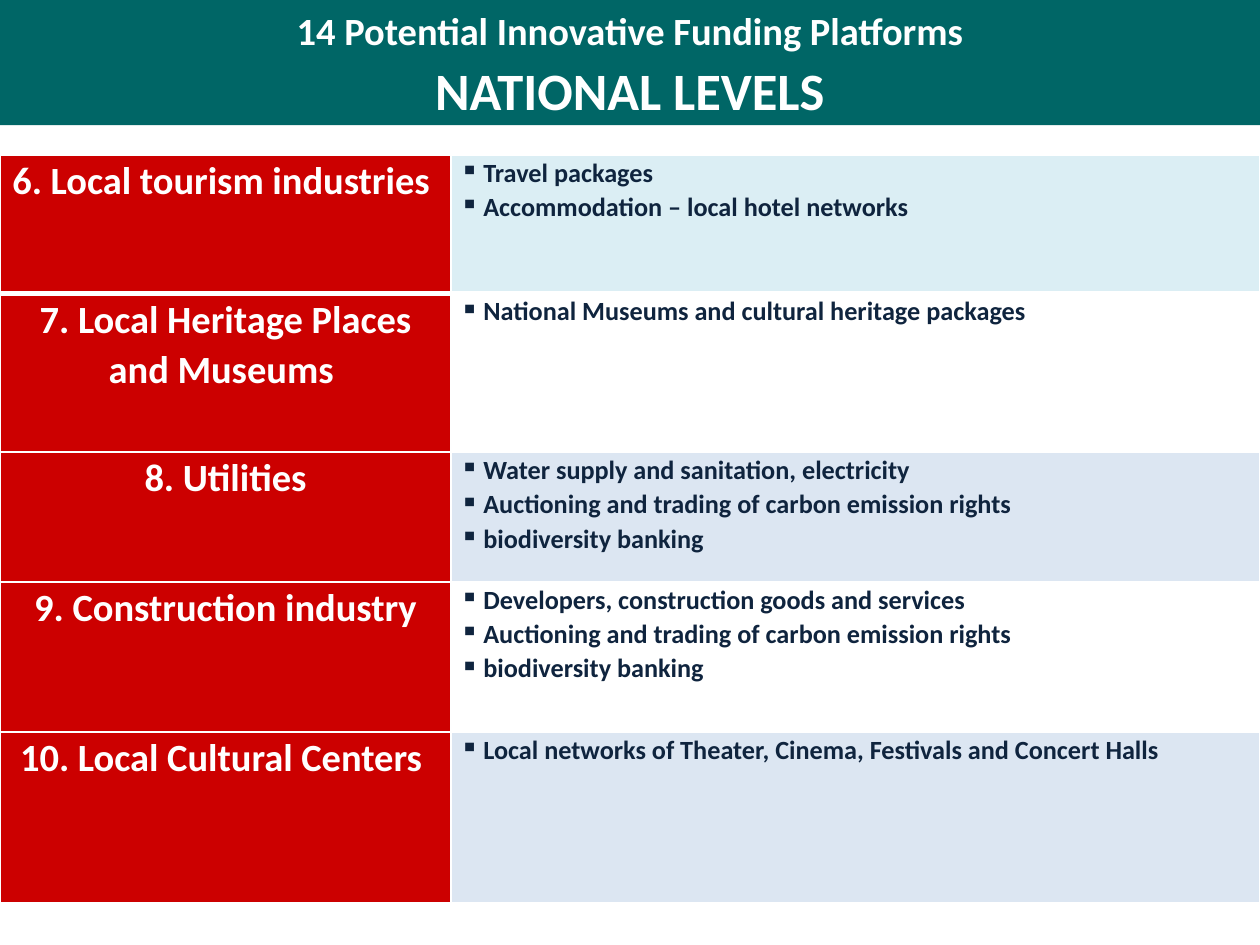
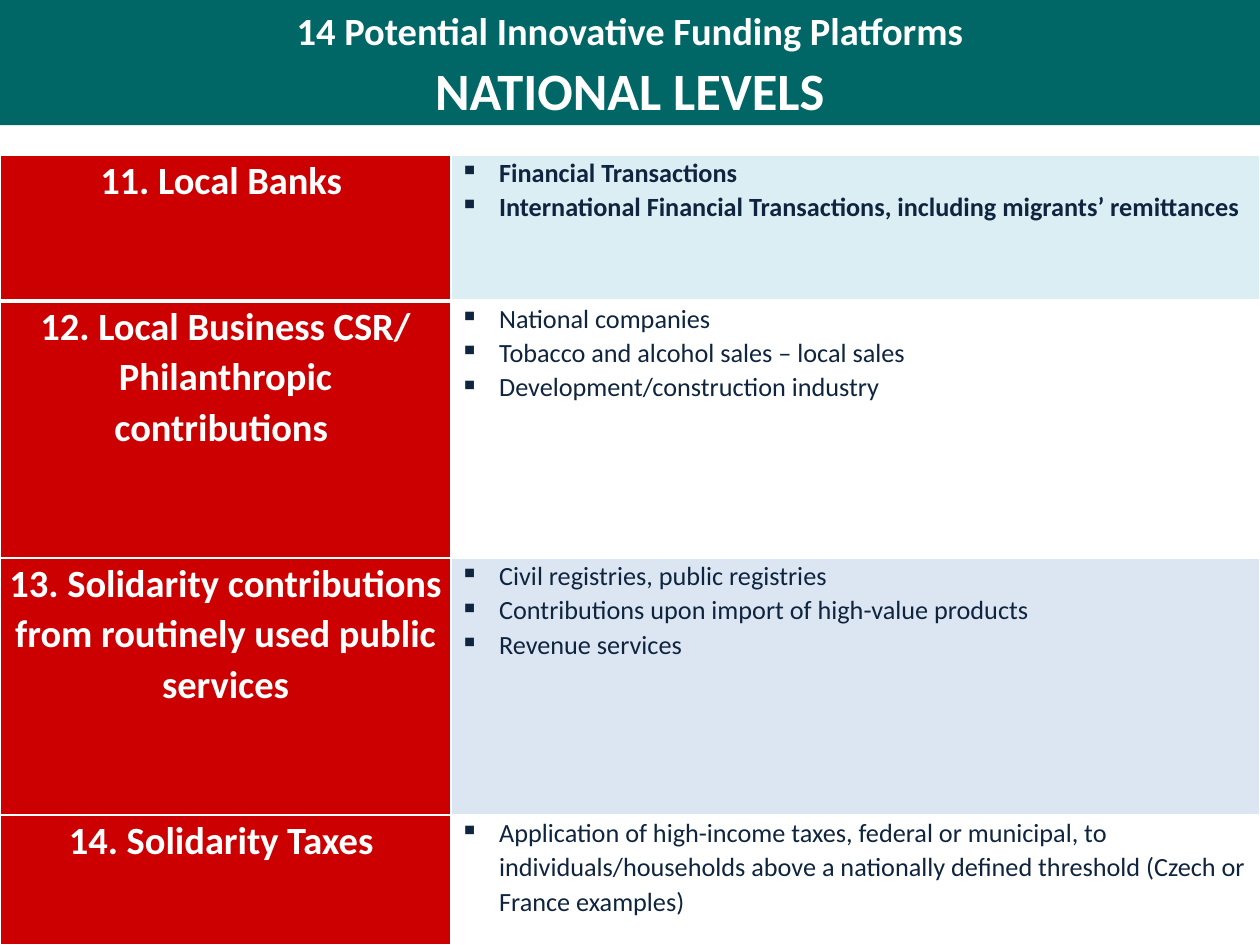
from pptx import Presentation
from pptx.dml.color import RGBColor
from pptx.enum.text import MSO_ANCHOR, MSO_AUTO_SIZE, PP_ALIGN
from pptx.oxml import parse_xml
from pptx.oxml.ns import nsdecls
from pptx.util import Pt

TEAL = RGBColor(0x00, 0x66, 0x66)
RED = RGBColor(0xCC, 0x00, 0x00)
WHITE = RGBColor(0xFF, 0xFF, 0xFF)
NAVY = RGBColor(0x0F, 0x24, 0x3E)
AQUA = RGBColor(0xDB, 0xEE, 0xF4)
PALE = RGBColor(0xDC, 0xE6, 0xF2)

CENTER, LEFT = PP_ALIGN.CENTER, PP_ALIGN.LEFT
MIDDLE = MSO_ANCHOR.MIDDLE
NO_FIT = MSO_AUTO_SIZE.NONE

FONT = "Calibri"
SPACING = 1.07
WIDTH, HEIGHT = 720, 540
BAND = 71.5
TOP = 88.5
COLS = (257.75, 462.25)
TITLE = "14 Potential Innovative Funding Platforms\nNATIONAL LEVELS"

# Each row: height, platform, bold sources, list of sources
CARBON = ["Auctioning and trading of carbon emission rights",
          "biodiversity banking"]
LOCAL = [
    (79.2, "6. Local tourism industries ", True,
     ["Travel packages", "Accommodation – local hotel networks"]),
    (90.7, "7. Local Heritage Places and Museums ", True,
     ["National Museums and cultural heritage packages"]),
    (74.2, "8. Utilities", True,
     ["Water supply and sanitation, electricity"] + CARBON),
    (85.8, "9. Construction industry", True,
     ["Developers, construction goods and services"] + CARBON),
    (97.6, "10. Local Cultural Centers ", True,
     ["Local networks of Theater, Cinema, Festivals and Concert Halls"]),
]
FINANCE = [
    (83.5, "11. Local Banks ", True,
     ["Financial Transactions",
      "International Financial Transactions, including migrants’ remittances"]),
    (146.9, "12. Local Business CSR/ Philanthropic contributions ", False,
     ["National companies", "Tobacco and alcohol sales – local sales",
      "Development/construction industry"]),
    (146.9, "13. Solidarity contributions from routinely used public services",
     False,
     ["Civil registries, public registries",
      "Contributions upon import of high-value products",
      "Revenue services"]),
    (74.2, "14. Solidarity Taxes ", False,
     ["Application of high-income taxes, federal or municipal, to "
      "individuals/households above a nationally defined threshold "
      "(Czech or France examples)"]),
]


class Deck:
    def __init__(self):
        self.show = Presentation()
        self.show.slide_width = Pt(WIDTH)
        self.show.slide_height = Pt(HEIGHT)
        self.slide = None

    def add(self):
        self.slide = self.show.slides.add_slide(self.show.slide_layouts[5])

    def style(self, para, size, color, bold=True, align=CENTER):
        para.alignment = align
        para.line_spacing = SPACING
        for run in para.runs:
            font = run.font
            font.name, font.size, font.bold = FONT, Pt(size), bold
            font.color.rgb = color

    def title(self, text):
        band = self.slide.shapes.title
        band.left, band.top = Pt(0), Pt(0)
        band.width, band.height = Pt(WIDTH), Pt(BAND)
        band.fill.solid()
        band.fill.fore_color.rgb = TEAL
        frame = band.text_frame
        frame.auto_size = NO_FIT
        frame.vertical_anchor = MIDDLE
        frame.text = text
        for para, size in zip(frame.paragraphs, (22, 30)):
            self.style(para, size, WHITE)

    def bullet(self, para, indent):
        props = para._p.get_or_add_pPr()
        props.set("marL", str(Pt(indent)))
        props.set("indent", str(-Pt(indent)))
        props.append(parse_xml(f'<a:buChar {nsdecls("a")} char="▪"/>'))

    def border(self, cell, row):
        """Draw white edges, thicker below the first row."""
        props = cell._tc.get_or_add_tcPr()
        thick = {(0, "B"), (1, "T")}
        for side in "LRTB":
            width = Pt(3 if (row, side) in thick else 1)
            props.append(parse_xml(
                f'<a:ln{side} {nsdecls("a")} w="{width}"><a:solidFill>'
                f'<a:srgbClr val="{WHITE}"/></a:solidFill></a:ln{side}>'))

    def cell(self, cell, row, text, fill):
        cell.margin_left = cell.margin_right = Pt(5)
        cell.margin_top = cell.margin_bottom = Pt(0)
        self.border(cell, row)
        cell.fill.solid()
        cell.fill.fore_color.rgb = fill
        cell.text_frame.text = text
        return cell.text_frame.paragraphs

    def table(self, rows, indent):
        high = sum(row[0] for row in rows)
        grid = self.slide.shapes.add_table(
            len(rows), 2, Pt(0), Pt(TOP), Pt(WIDTH), Pt(high)).table
        grid.first_row = grid.horz_banding = False
        for col, width in zip(grid.columns, COLS):
            col.width = Pt(width)
        for i, (tall, name, bold, items) in enumerate(rows):
            grid.rows[i].height = Pt(tall)
            for para in self.cell(grid.cell(i, 0), i, name, RED):
                self.style(para, 22, WHITE)
            fill = AQUA if i == 0 else WHITE if i % 2 else PALE
            for para in self.cell(grid.cell(i, 1), i, "\n".join(items), fill):
                self.style(para, 15, NAVY, bold, LEFT)
                self.bullet(para, indent)


def main():
    deck = Deck()
    for rows, indent in ((LOCAL, 13.5), (FINANCE, 22.5)):
        deck.add()
        deck.title(TITLE)
        deck.table(rows, indent)
    deck.show.save("out.pptx")


if __name__ == "__main__":
    main()
